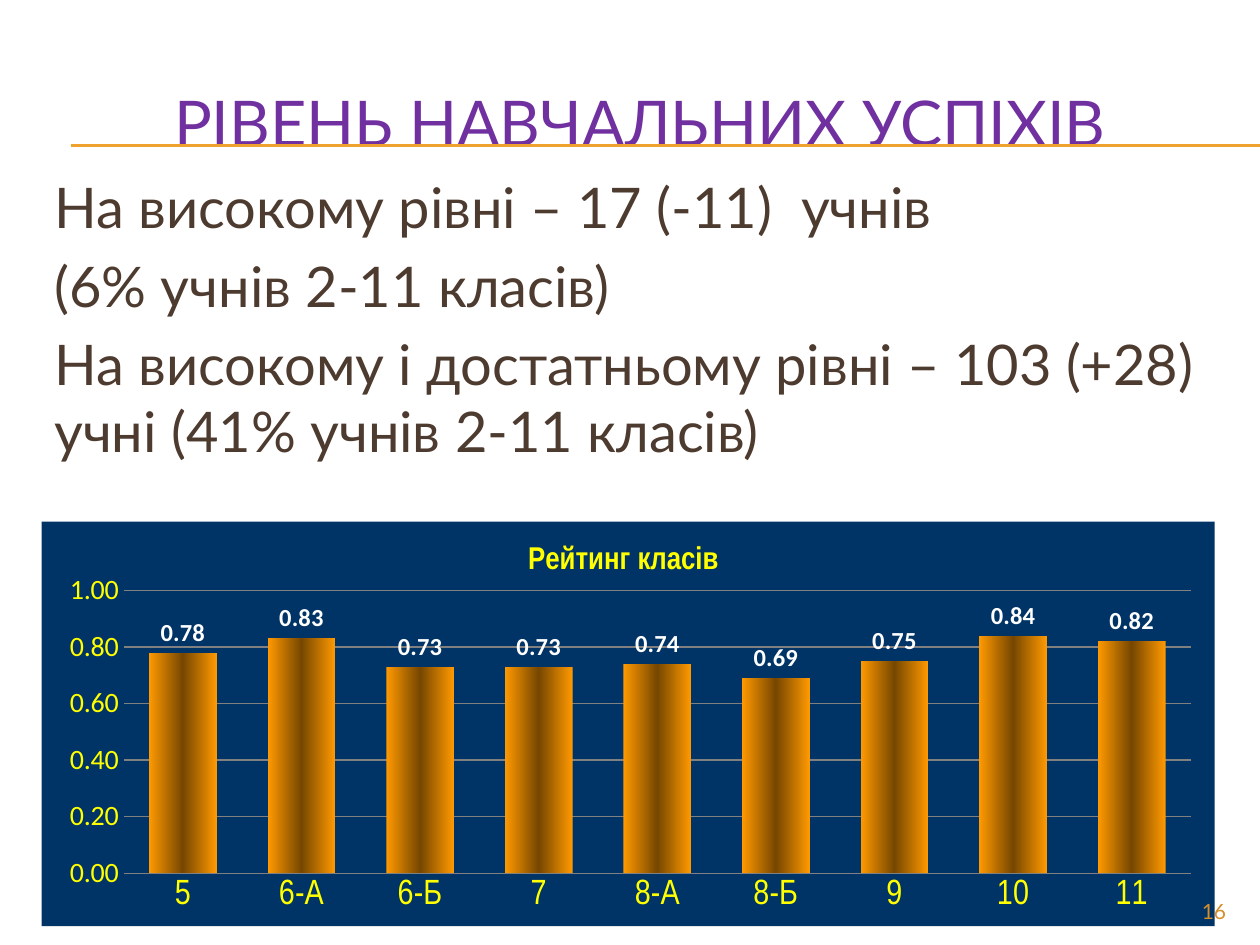
"""Build the slide on pupils' achievement with a class rating chart."""
from copy import deepcopy
from dataclasses import dataclass

from lxml import etree
from pptx import Presentation
from pptx.chart.data import CategoryChartData
from pptx.dml.color import RGBColor
from pptx.enum.chart import XL_CHART_TYPE as ChartType, XL_LABEL_POSITION as LabelPosition
from pptx.enum.chart import XL_TICK_MARK as TickMark
from pptx.enum.shapes import MSO_CONNECTOR as Connector
from pptx.enum.text import MSO_ANCHOR as Anchor, MSO_AUTO_SIZE as AutoSize, PP_ALIGN as Align
from pptx.oxml import parse_xml
from pptx.oxml.ns import nsdecls, qn
from pptx.util import Inches, Pt

TITLE = "РІВЕНЬ НАВЧАЛЬНИХ УСПІХІВ"
BODY = [
    "На високому рівні – 17 (-11)  учнів",
    "(6% учнів 2-11 класів)",
    "На високому і достатньому рівні – 103 (+28)  учні (41% учнів 2-11 класів)",
]
CHART_TITLE = "Рейтинг класів"
RATINGS = {
    "5": 0.78, "6-А": 0.83, "6-Б": 0.73, "7": 0.73, "8-А": 0.74,
    "8-Б": 0.69, "9": 0.75, "10": 0.84, "11": 0.82,
}
PAGE = "16"

WIDTH, HEIGHT = 10, 7.5
MARGIN = 0.33
TEXT_WIDTH = 9.5
BOXES = {
    "title": (MARGIN, 0.5, TEXT_WIDTH, 0.92),
    "body": (MARGIN, 1.32, TEXT_WIDTH, 4.95),
    "chart": (MARGIN, 4.14, 9.31, 3.21),
    "page": (9, 7.08, 0.83, 0.27),
}
RULE_LEFT, RULE_TOPS = 0.56, (1.15, 1.16)
PLOT_LAYOUT = {"layoutTarget": "inner", "xMode": "edge", "yMode": "edge",
               "x": 0.07, "y": 0.17, "w": 0.91, "h": 0.7}
TITLE_LAYOUT = {"xMode": "edge", "yMode": "edge", "x": 0.41, "y": 0.04}


@dataclass(frozen=True)
class Theme:
    text_font: str = "Lato"
    chart_font: str = "Calibri"
    narrow_font: str = "Arial Narrow"
    title: str = "7030A0"
    body: str = "4E3B30"
    rule: str = "F0A22E"
    page: str = "D48F29"
    panel: str = "003366"
    axis: str = "FFFF00"
    grid: str = "808080"
    label: str = "FFFFFF"
    bar: tuple = ("FF9900", "764700", "FF9900")
    title_size: int = 36
    body_size: int = 32
    page_size: int = 12
    category_size: int = 20
    chart_title_size: int = 18
    value_size: int = 16
    label_size: int = 14


THEME = Theme()


def style(font, name, size, color, bold=False):
    font.name, font.size, font.bold = name, Pt(size), bold
    font.color.rgb = RGBColor.from_string(color)


def place(shape, box):
    shape.left, shape.top, shape.width, shape.height = map(Inches, box)


def add_rule(slide, top):
    rule = slide.shapes.add_connector(
        Connector.STRAIGHT, Inches(RULE_LEFT), Inches(top), Inches(WIDTH), Inches(top))
    rule.line.color.rgb = RGBColor.from_string(THEME.rule)
    rule.line.width = Pt(0.75)
    etree.SubElement(rule._element.spPr, qn("a:effectLst"))


def fill_title(title):
    place(title, BOXES["title"])
    frame = title.text_frame
    frame.text = TITLE
    frame.auto_size, frame.vertical_anchor = AutoSize.NONE, Anchor.MIDDLE
    paragraph = frame.paragraphs[0]
    paragraph.alignment = Align.CENTER
    style(paragraph.font, THEME.text_font, THEME.title_size, THEME.title)


def fill_body(body):
    place(body, BOXES["body"])
    frame = body.text_frame
    frame.text = "\n".join(BODY)
    frame.auto_size = AutoSize.NONE
    for index, paragraph in enumerate(frame.paragraphs):
        properties = paragraph._p.get_or_add_pPr()
        properties.set("marL", "0")
        properties.set("indent", "0")
        etree.SubElement(properties, qn("a:buNone"))
        paragraph.space_before = Pt(0.2 * THEME.body_size if index else 0)
        style(paragraph.font, THEME.text_font, THEME.body_size, THEME.body)


def add_page_number(slide):
    box = slide.shapes.add_textbox(*map(Inches, BOXES["page"]))
    frame = box.text_frame
    frame.word_wrap = True
    frame.text = PAGE
    paragraph = frame.paragraphs[0]
    paragraph.alignment = Align.RIGHT
    style(paragraph.font, THEME.text_font, THEME.page_size, THEME.page)


def set_layout(element, position, values):
    for old in element.findall(qn("c:layout")):
        element.remove(old)
    layout = etree.Element(qn("c:layout"))
    manual = etree.SubElement(layout, qn("c:manualLayout"))
    for name, value in values.items():
        etree.SubElement(manual, qn(f"c:{name}")).set("val", str(value))
    element.insert(position, layout)


def panel_properties():
    return parse_xml(
        f'<c:spPr {nsdecls("c", "a")}><a:solidFill><a:srgbClr val="{THEME.panel}"/>'
        "</a:solidFill><a:ln><a:noFill/></a:ln></c:spPr>")


def style_axis(axis, font, size):
    axis.major_tick_mark = axis.minor_tick_mark = TickMark.NONE
    style(axis.tick_labels.font, font, size, THEME.axis)


def style_bars(plot):
    plot.gap_width, plot.overlap, plot.vary_by_categories = 75, -25, False
    series = plot.series[0]
    series.invert_if_negative = False
    fill = series.format.fill
    fill.gradient()
    fill.gradient_angle = 0
    stops = next(series._element.iter(qn("a:gsLst")))
    stops.append(deepcopy(stops[0]))
    for index, (stop, color) in enumerate(zip(fill.gradient_stops, THEME.bar)):
        stop.position = index / 2
        stop.color.rgb = RGBColor.from_string(color)
    labels = series.data_labels
    labels.show_value, labels.position = True, LabelPosition.OUTSIDE_END
    labels.number_format, labels.number_format_is_linked = "0.00", False
    style(labels.font, THEME.chart_font, THEME.label_size, THEME.label, bold=True)


def add_rating_chart(slide):
    data = CategoryChartData(number_format="0.00")
    data.categories = list(RATINGS)
    data.add_series("Series 1", list(RATINGS.values()))
    chart = slide.shapes.add_chart(
        ChartType.COLUMN_CLUSTERED, *map(Inches, BOXES["chart"]), data).chart
    chart.has_legend = False
    style(chart.font, THEME.chart_font, 10, "000000")
    frame = chart.chart_title.text_frame
    frame.text = CHART_TITLE
    style(frame.paragraphs[0].font, THEME.narrow_font, THEME.chart_title_size,
          THEME.axis, bold=True)
    chart.chart_title.include_in_layout = False

    categories, values = chart.category_axis, chart.value_axis
    style_axis(categories, THEME.narrow_font, THEME.category_size)
    style_axis(values, THEME.chart_font, THEME.value_size)
    values.minimum_scale, values.maximum_scale, values.major_unit = 0, 1, 0.2
    values.tick_labels.number_format = "0.00"
    values.tick_labels.number_format_is_linked = False
    values.format.line.fill.background()
    for line in (categories.format.line, values.major_gridlines.format.line):
        line.color.rgb = RGBColor.from_string(THEME.grid)
        line.width = Pt(0.75)
    style_bars(chart.plots[0])

    chart_element = chart._chartSpace.chart
    plot_area = chart_element.plotArea
    set_layout(plot_area, 0, PLOT_LAYOUT)
    set_layout(chart_element.find(qn("c:title")), 1, TITLE_LAYOUT)
    plot_area.append(panel_properties())
    chart_element.addnext(panel_properties())


def main():
    presentation = Presentation()
    presentation.slide_width, presentation.slide_height = Inches(WIDTH), Inches(HEIGHT)
    slide = presentation.slides.add_slide(presentation.slide_layouts[1])
    for top in RULE_TOPS:
        add_rule(slide, top)
    fill_title(slide.shapes.title)
    fill_body(slide.placeholders[1])
    add_rating_chart(slide)
    add_page_number(slide)
    presentation.save("out.pptx")


if __name__ == "__main__":
    main()
